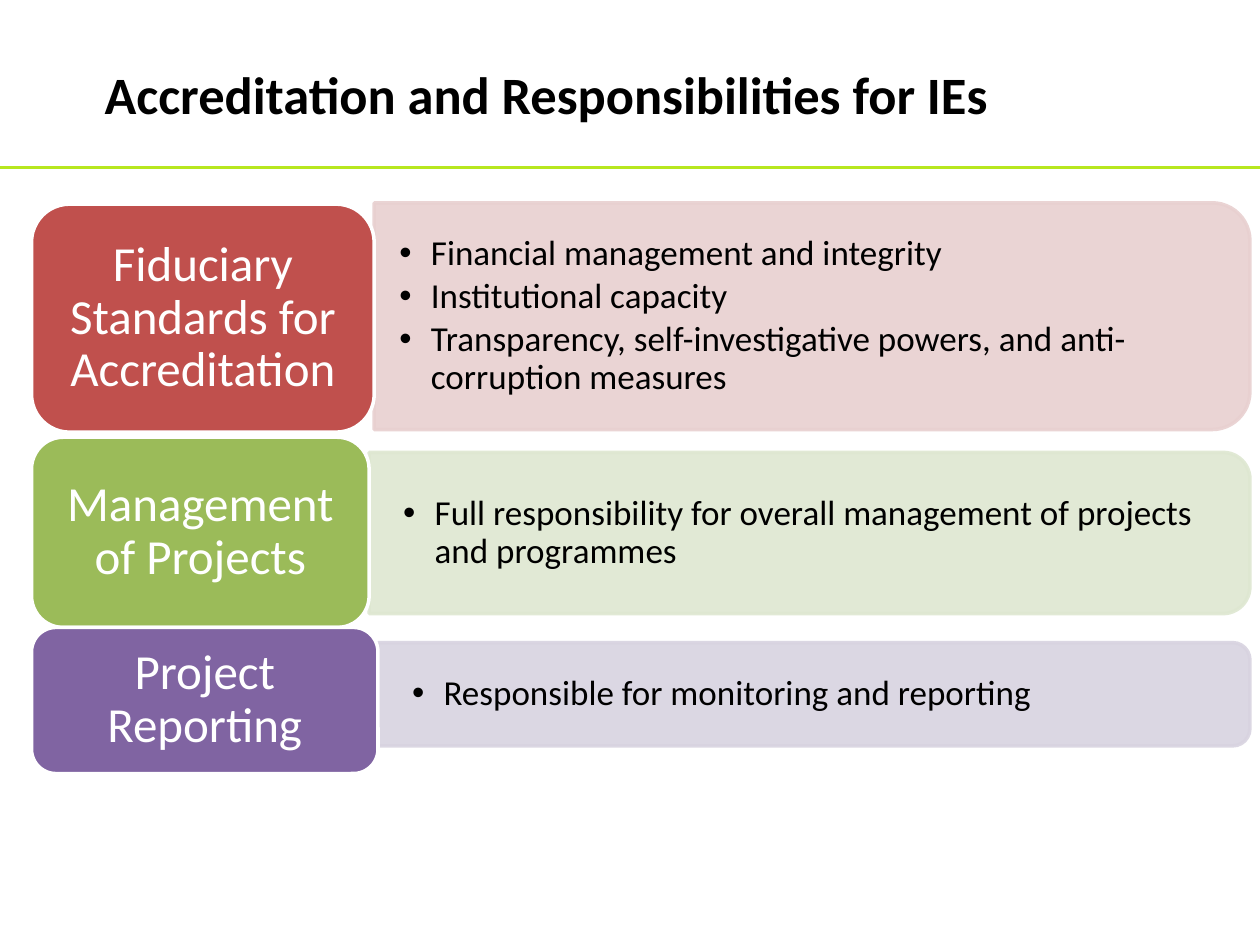
"""Build the slide on accreditation and responsibilities for IEs."""
from lxml.etree import SubElement
from pptx import Presentation
from pptx.dml.color import RGBColor
from pptx.enum.shapes import MSO_CONNECTOR, MSO_SHAPE
from pptx.enum.text import MSO_ANCHOR, MSO_AUTO_SIZE, PP_ALIGN
from pptx.oxml.ns import qn
from pptx.util import Inches, Pt

COLORS = {"black": "000000", "white": "FFFFFF", "rule": "B7E71F"}
TITLE = "Accreditation and Responsibilities for IEs"
ROWS = [
    {
        "heading": "Fiduciary Standards for Accreditation",
        "points": [
            "Financial management and integrity",
            "Institutional capacity",
            "Transparency, self-investigative powers, and anti-corruption measures",
        ],
        "colors": ("C0504D", "E8D0D0"),
        "tab": (1.62, 2.72, 1.81),
        "panel": (1.61, 1.8),
        "text_width": 6.85,
        "inset": 0.2,
    },
    {
        "heading": "Management of Projects",
        "points": ["Full responsibility for overall management of projects and programmes"],
        "colors": ("9BBB59", "DEE7D1"),
        "tab": (3.47, 2.68, 1.51),
        "panel": (3.59, 1.28),
        "text_width": 6.92,
        "inset": 0.27,
    },
    {
        "heading": "Project Reporting",
        "points": ["Responsible for monitoring and reporting"],
        "colors": ("8064A2", "D8D3E0"),
        "tab": (4.98, 2.75, 1.16),
        "panel": (5.1, 0.82),
        "text_width": 6.88,
        "inset": 0.27,
    },
]
TAB_LEFT = 0.25
PANEL_RIGHT = 9.92


def write_text(shape, lines, *, size, color, insets, bold=False,
               align=PP_ALIGN.LEFT, spacing=1.0, after=0, bullets=False):
    frame = shape.text_frame
    frame.word_wrap = True
    frame.auto_size = MSO_AUTO_SIZE.NONE
    frame.vertical_anchor = MSO_ANCHOR.MIDDLE
    (frame.margin_left, frame.margin_top,
     frame.margin_right, frame.margin_bottom) = map(Inches, insets)
    frame.text = "\n".join(lines)
    for paragraph in frame.paragraphs:
        if bullets:
            properties = paragraph._p.get_or_add_pPr()
            properties.set("marL", str(Inches(0.25)))
            properties.set("indent", str(-Inches(0.25)))
            SubElement(properties, qn("a:buFont"), typeface="Arial")
            SubElement(properties, qn("a:buChar"), char="•")
        paragraph.alignment = align
        paragraph.line_spacing = spacing
        paragraph.space_after = Pt(after)
        font = paragraph.runs[0].font
        font.name = "Calibri"
        font.size = Pt(size)
        font.bold = bold
        font.color.rgb = RGBColor.from_string(color)


def add_block(slide, kind, left, top, width, height, fill, line, opacity=100):
    shape = slide.shapes.add_shape(kind, *map(Inches, (left, top, width, height)))
    shape.shadow.inherit = False
    shape.fill.solid()
    shape.fill.fore_color.rgb = RGBColor.from_string(fill)
    shape.line.color.rgb = RGBColor.from_string(line)
    shape.line.width = Pt(2)
    if opacity < 100:
        for color in shape._element.spPr.iter(qn("a:srgbClr")):
            SubElement(color, qn("a:alpha"), val=str(opacity * 1000))
    return shape


def add_row(slide, row):
    tab_top, tab_width, tab_height = row["tab"]
    panel_top, panel_height = row["panel"]
    tab_color, panel_color = row["colors"]
    inset = row["inset"]
    panel_left = TAB_LEFT + tab_width
    panel_width = PANEL_RIGHT - panel_left
    shift = (panel_width - panel_height) / 2

    panel = add_block(slide, MSO_SHAPE.ROUND_2_SAME_RECTANGLE,
                      panel_left + shift, panel_top - shift, panel_height, panel_width,
                      panel_color, panel_color, opacity=90)
    panel.rotation = 90
    box = slide.shapes.add_textbox(*map(Inches, (panel_left, panel_top,
                                                 row["text_width"], panel_height)))
    write_text(box, row["points"], size=20, color=COLORS["black"],
               insets=(inset, 0.14, 0.27, 0.14), spacing=0.9, after=3, bullets=True)
    tab = add_block(slide, MSO_SHAPE.ROUNDED_RECTANGLE, TAB_LEFT, tab_top,
                    tab_width, tab_height, tab_color, COLORS["white"])
    write_text(tab, [row["heading"]], size=28, color=COLORS["white"],
               insets=(0.12, 0.06, 0.12, 0.06), align=PP_ALIGN.CENTER, spacing=0.9)


def main():
    presentation = Presentation()
    presentation.slide_width = Inches(10)
    presentation.slide_height = Inches(7.5)
    slide = presentation.slides.add_slide(presentation.slide_layouts[5])

    title = slide.shapes.title
    title.left, title.top, title.width, title.height = map(Inches, (0.17, 0.08, 9.33, 1.25))
    write_text(title, [TITLE], size=30, color=COLORS["black"], bold=True,
               insets=(0.66, 0.13, 0.1, 0.05))

    rule = slide.shapes.add_connector(MSO_CONNECTOR.STRAIGHT,
                                      *map(Inches, (0, 1.33, 10, 1.33)))
    rule.line.color.rgb = RGBColor.from_string(COLORS["rule"])
    rule.line.width = Pt(2)
    SubElement(rule._element.spPr, qn("a:effectLst"))

    for row in ROWS:
        add_row(slide, row)
    presentation.save("out.pptx")


if __name__ == "__main__":
    main()
